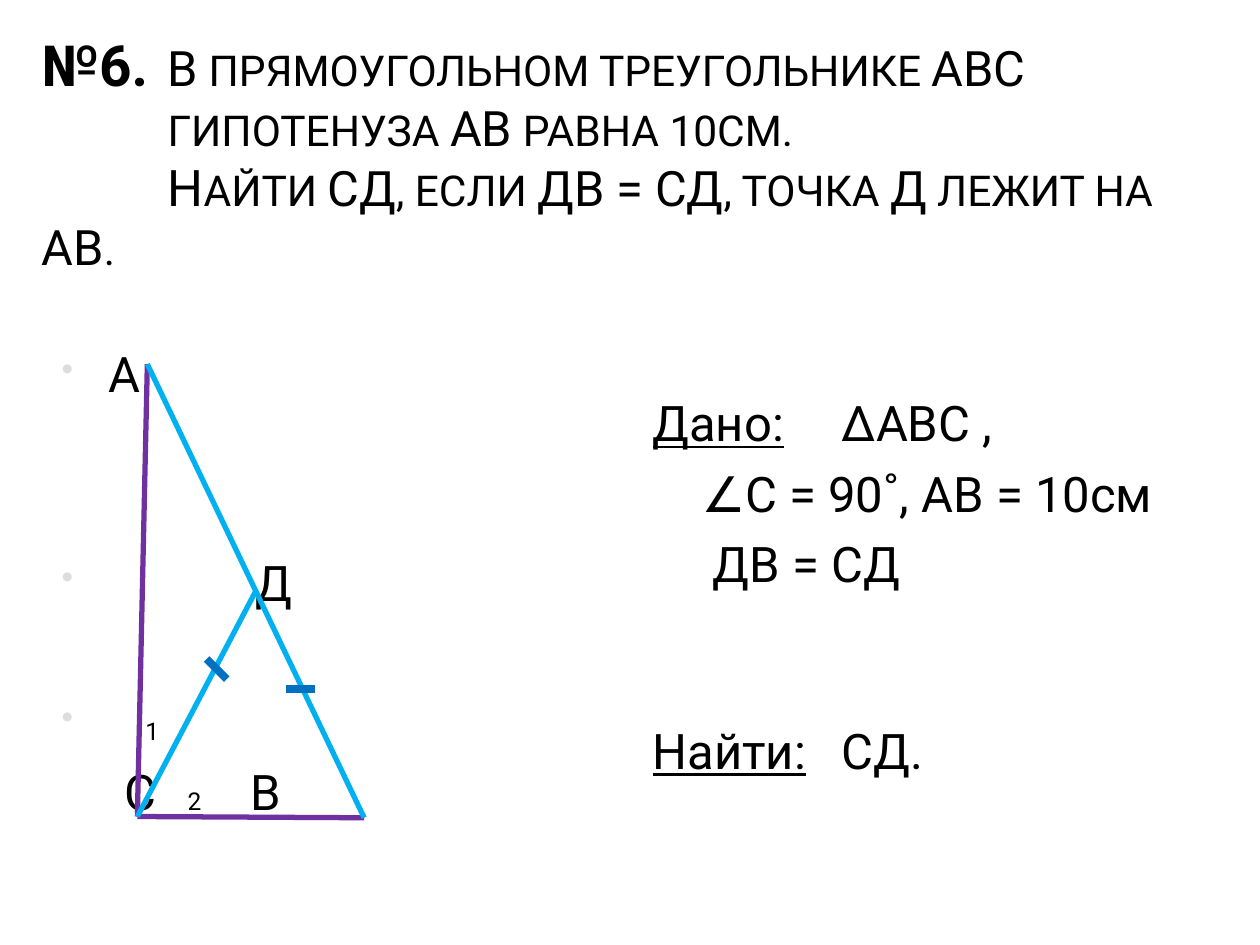
from lxml.etree import SubElement
from pptx import Presentation
from pptx.dml.color import RGBColor
from pptx.enum.shapes import MSO_CONNECTOR as Connector
from pptx.enum.text import MSO_ANCHOR as Anchor, MSO_AUTO_SIZE as AutoSize, PP_ALIGN as Align
from pptx.oxml.ns import qn
from pptx.util import Pt

FONT = "Roboto"
COLORS = {
    "text": "000000",
    "bullet": "DDDDDD",
    "leg": "7030A0",
    "side": "00B0F0",
    "tick": "0070C0",
}
BODY, ANGLE = 28, 14
NUMBER, CAPITAL, SMALL = 32.4, 27.9, 24.3
LINE_GAP = 6.5

A, B, C, D = (84.2, 208.1), (208.1, 467.3), (78.5, 466.6), (146.2, 337.7)
SEGMENTS = [
    (A, C, "leg", 3),
    (C, B, "leg", 3),
    (A, B, "side", 3),
    (C, D, "side", 3),
    ((118.1, 376.6), (129.6, 388.1), "tick", 4.5),
    ((163.4, 393.8), (180, 393.8), "tick", 4.5),
]


def color(name):
    return RGBColor.from_string(COLORS[name])


def add_run(paragraph, text, size, bold=False, underline=False):
    run = paragraph.add_run()
    run.text = text
    run.font.size = Pt(size)
    run.font.bold = bold
    run.font.underline = underline


def next_paragraph(frame, left=0, indent=0, before=0, bullet=False, tabs=()):
    first = frame.paragraphs[0]
    paragraph = frame.add_paragraph() if first.runs else first
    paragraph.alignment = Align.LEFT
    paragraph.space_before = Pt(before)
    paragraph.font.name = FONT
    paragraph.font.color.rgb = color("text")
    properties = paragraph._p.get_or_add_pPr()
    properties.set("marL", str(Pt(left)))
    properties.set("indent", str(Pt(indent)))
    if bullet:
        bullet_color = SubElement(properties, qn("a:buClr"))
        SubElement(bullet_color, qn("a:srgbClr"), val=COLORS["bullet"])
        SubElement(properties, qn("a:buSzPct"), val="70000")
        SubElement(properties, qn("a:buChar"), char="•")
    if tabs:
        tab_list = SubElement(properties, qn("a:tabLst"))
        for position in tabs:
            SubElement(tab_list, qn("a:tab"), pos=str(Pt(position)), algn="l")
    # defRPr must stay behind bullets and tabs
    defaults = properties.find(qn("a:defRPr"))
    if defaults is not None:
        properties.append(defaults)
    return paragraph


def style_runs(frame):
    for paragraph in frame.paragraphs:
        for run in paragraph.runs:
            run.font.name = FONT
            run.font.color.rgb = color("text")


def set_frame(frame, margin_top):
    frame.word_wrap = True
    frame.auto_size = AutoSize.NONE
    frame.vertical_anchor = Anchor.TOP
    frame.margin_top = Pt(margin_top)


def add_text_box(slide, left, top, width, height):
    shape = slide.shapes.add_textbox(Pt(left), Pt(top), Pt(width), Pt(height))
    set_frame(shape.text_frame, 44.5)
    return shape.text_frame


def fill_title(title):
    title.left, title.top, title.width, title.height = Pt(16.6), Pt(0), Pt(684), Pt(129.6)
    frame = title.text_frame
    set_frame(frame, 16.8)
    lines = [
        (0, [("В", CAPITAL), (" ПРЯМОУГОЛЬНОМ ТРЕУГОЛЬНИКЕ ", SMALL), ("АВС", CAPITAL)]),
        (72, [("ГИПОТЕНУЗА ", SMALL), ("АВ", CAPITAL), (" РАВНА 10СМ.", SMALL)]),
        (72, [("Н", 28.8), ("АЙТИ ", SMALL), ("СД", CAPITAL), (", ЕСЛИ ", SMALL),
              ("ДВ = СД", CAPITAL), (", ТОЧКА ", SMALL), ("Д", CAPITAL),
              (" ЛЕЖИТ НА ", SMALL), ("АВ", CAPITAL), (".", SMALL)]),
    ]
    for indent, parts in lines:
        if indent:
            paragraph = next_paragraph(frame, indent=indent)
        else:
            paragraph = next_paragraph(frame, tabs=[99])
            add_run(paragraph, "№6.\t", NUMBER, bold=True)
        for text, size in parts:
            add_run(paragraph, text, size)
    style_runs(frame)


def add_vertex_labels(slide):
    frame = add_text_box(slide, 28.1, 151.9, 329.8, 372.2)
    bulleted = [
        (27, 0, [("А", BODY)]),
        (111, 85.5, [("Д", BODY)]),
        (41, 46, [(" ", BODY), ("1", ANGLE)]),
    ]
    for left, before, parts in bulleted:
        paragraph = next_paragraph(frame, left, -left, before, bullet=True)
        for text, size in parts:
            add_run(paragraph, text, size)
    paragraph = next_paragraph(frame, before=LINE_GAP, tabs=[14, 52, 157.5])
    for text, size in [("\tС\t", BODY), ("2\t", ANGLE), ("В", BODY)]:
        add_run(paragraph, text, size)
    style_runs(frame)


def add_conditions(slide):
    frame = add_text_box(slide, 365.8, 180, 342, 318.2)
    lines = [
        (0, 0, "Дано:", "\t∆АВС ,", [102]),
        (28, LINE_GAP, "", "∠С = 90˚, АВ = 10см", []),
        (34.5, LINE_GAP, "", "ДВ = СД", []),
        (0, 73.5, "Найти:", "\tСД.", [107]),
    ]
    for left, before, heading, text, tabs in lines:
        paragraph = next_paragraph(frame, left, before=before, tabs=tabs)
        if heading:
            add_run(paragraph, heading, BODY, underline=True)
        add_run(paragraph, text, BODY)
    style_runs(frame)


def add_segment(slide, start, end, color_name, width):
    points = [Pt(value) for value in start + end]
    connector = slide.shapes.add_connector(Connector.STRAIGHT, *points)
    connector.line.color.rgb = color(color_name)
    connector.line.width = Pt(width)
    SubElement(connector._element.spPr, qn("a:effectLst"))


def main():
    presentation = Presentation()
    presentation.slide_width, presentation.slide_height = Pt(720), Pt(540)
    slide = presentation.slides.add_slide(presentation.slide_layouts[5])
    fill_title(slide.shapes.title)
    add_vertex_labels(slide)
    add_conditions(slide)
    for segment in SEGMENTS:
        add_segment(slide, *segment)
    presentation.save("out.pptx")


if __name__ == "__main__":
    main()
